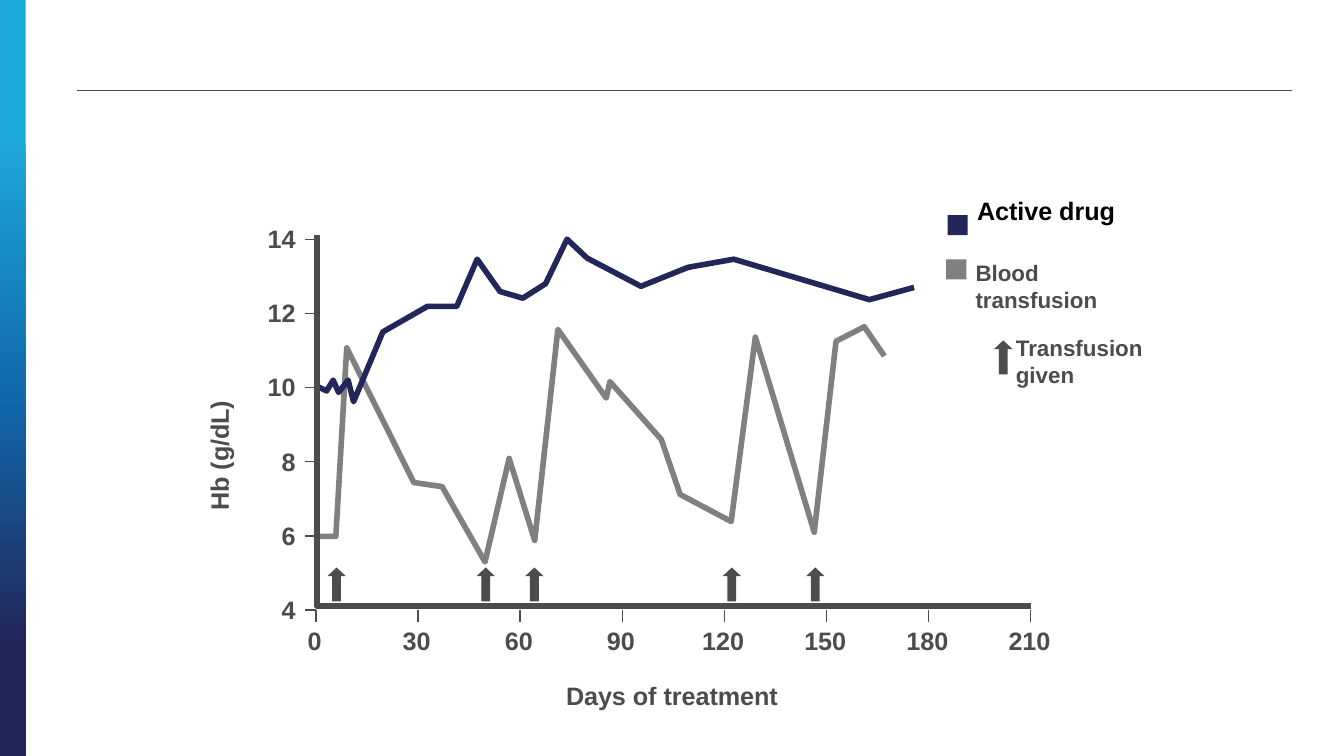
from copy import deepcopy
from typing import NamedTuple

from pptx import Presentation
from pptx.dml.color import RGBColor
from pptx.enum.shapes import MSO_CONNECTOR, MSO_SHAPE
from pptx.enum.text import MSO_ANCHOR, PP_ALIGN
from pptx.oxml.ns import qn
from pptx.util import Inches, Pt

LINE = MSO_CONNECTOR.STRAIGHT
RECT, UP_ARROW = MSO_SHAPE.RECTANGLE, MSO_SHAPE.UP_ARROW
TOP, MIDDLE, BOTTOM = MSO_ANCHOR.TOP, MSO_ANCHOR.MIDDLE, MSO_ANCHOR.BOTTOM
LEFT, CENTER, RIGHT = PP_ALIGN.LEFT, PP_ALIGN.CENTER, PP_ALIGN.RIGHT

COLORS = {
    "sky": "1EA9DB", "blue": "1067AB", "navy": "222658",
    "gray": "808080", "dark": "4C4C4C", "black": "000000",
}
WIDTH = Inches(10)
HEIGHT = WIDTH * 9 // 16
COLS, ROWS = 100, 56.25
COL, ROW = WIDTH / COLS, HEIGHT / ROWS
X0, Y0 = 23.5, 45.4
COLS_PER_DAY, ROWS_PER_HB = 7.6 / 30, 2.76
HB_MIN = 4
ARROW_W, ARROW_H = 1.1, 2.4
SWATCH = 1.5


class Box(NamedTuple):
    col: float
    row: float
    cols: float
    rows: float


class Label(NamedTuple):
    text: str
    box: Box
    size: float = 13.5
    color: str = "dark"
    align: PP_ALIGN = CENTER
    anchor: MSO_ANCHOR = TOP
    insets: tuple = (0, 0, 0, 0)
    wrap: bool = False
    rotation: float = 0


class Series(NamedTuple):
    color: str
    points: list


SERIES = [
    Series("gray", [
        (0, 5.99), (5.9, 5.99), (9.1, 11.07), (28.8, 7.44), (37.1, 7.33),
        (49.7, 5.3), (56.8, 8.09), (64.3, 5.88), (71.1, 11.57), (85.3, 9.72),
        (86.4, 10.16), (101.5, 8.6), (107, 7.12), (122, 6.39), (129.1, 11.36),
        (146.4, 6.1), (152.8, 11.25), (161.1, 11.64), (167, 10.85),
    ]),
    Series("navy", [
        (0, 10.05), (3.2, 9.91), (5.1, 10.2), (6.7, 9.87), (9.5, 10.2),
        (11.1, 9.62), (19.7, 11.5), (32.8, 12.19), (41.4, 12.19), (47.4, 13.46),
        (54.1, 12.59), (60.8, 12.41), (67.5, 12.8), (73.8, 14), (79.7, 13.49),
        (95.5, 12.73), (109.3, 13.24), (122.8, 13.46), (162.6, 12.37),
        (175.7, 12.7),
    ]),
]
TRANSFUSION_DAYS = [6.1, 49.9, 64.2, 122.2, 146.7]
LEGEND_INSETS = (1, 0.5, 1, 0.5)
LABELS = [
    Label("Hb (g/dL)", Box(10.5, 32, 13, 3.8), anchor=BOTTOM,
          insets=(0, 0, 0, 1.5), wrap=True, rotation=270),
    Label("Days of treatment", Box(42, 50.6, 16, 2.3)),
    Label("Active drug", Box(72.7, 14.5, 10.3, 4.5), color="black",
          align=LEFT, wrap=True),
    Label("Blood transfusion", Box(71.6, 18.8, 15.8, 5), 12, align=LEFT,
          insets=LEGEND_INSETS, wrap=True),
    Label("Transfusion given", Box(74.6, 24.4, 13.2, 5), 12, align=LEFT,
          insets=LEGEND_INSETS, wrap=True),
]


def rgb(name: str) -> RGBColor:
    return RGBColor.from_string(COLORS[name])


def x(col: float) -> int:
    return round(col * COL)


def y(row: float) -> int:
    return round(row * ROW)


def day_col(day: float) -> float:
    return X0 + day * COLS_PER_DAY


def hb_row(hb: float) -> float:
    return Y0 - (hb - HB_MIN) * ROWS_PER_HB


def add_box(shapes, kind: MSO_SHAPE, box: Box, color: str):
    sp = shapes.add_shape(kind, x(box.col), y(box.row), x(box.cols), y(box.rows))
    sp.shadow.inherit = False
    sp.fill.solid()
    sp.fill.fore_color.rgb = rgb(color)
    sp.line.fill.background()
    return sp


def add_sidebar(shapes) -> None:
    sp = add_box(shapes, RECT, Box(0, 0, 1.9, ROWS), "sky")
    sp.fill.gradient()
    sp.fill.gradient_angle = 270
    stops = sp._element.spPr.find(".//" + qn("a:gsLst"))
    stops.append(deepcopy(stops[0]))
    scale = [(0.18, "sky"), (0.53, "blue"), (0.85, "navy")]
    for stop, (position, color) in zip(sp.fill.gradient_stops, scale):
        stop.position = position
        stop.color.rgb = rgb(color)


def add_line(shapes, start: tuple, end: tuple, width: float) -> None:
    s = shapes.add_connector(LINE, x(start[0]), y(start[1]), x(end[0]), y(end[1]))
    s.line.color.rgb = rgb("dark")
    s.line.width = Pt(width)
    s._element.spPr.append(s._element.spPr.makeelement(qn("a:effectLst"), {}))


def add_polyline(shapes, points: list, color: str) -> None:
    places = [(x(col), y(row)) for col, row in points]
    builder = shapes.build_freeform(*places[0])
    builder.add_line_segments(places[1:], close=False)
    sp = builder.convert_to_shape()
    sp.shadow.inherit = False
    sp.fill.background()
    sp.line.color.rgb = rgb(color)
    sp.line.width = Pt(3)


def add_arrow(shapes, col: float, row: float) -> None:
    sp = add_box(shapes, UP_ARROW, Box(col, row, ARROW_W, ARROW_H), "dark")
    sp.adjustments[1] = 0.476
    sp.line.color.rgb = rgb("dark")
    sp.line.width = Pt(0.75)
    ln = sp._element.spPr.find(qn("a:ln"))
    ln.append(ln.makeelement(qn("a:miter"), {"lim": "800000"}))


def add_label(shapes, label: Label) -> None:
    box = label.box
    sp = shapes.add_textbox(x(box.col), y(box.row), x(box.cols), y(box.rows))
    sp.rotation = label.rotation
    tf = sp.text_frame
    left, top, right, bottom = label.insets
    tf.margin_left, tf.margin_right = x(left), x(right)
    tf.margin_top, tf.margin_bottom = y(top), y(bottom)
    tf.word_wrap = label.wrap
    tf.vertical_anchor = label.anchor
    p = tf.paragraphs[0]
    p.text = label.text
    p.alignment = label.align
    p.font.name = "Arial"
    p.font.size = Pt(label.size)
    p.font.bold = True
    p.font.color.rgb = rgb(label.color)


def add_axes(shapes) -> None:
    add_polyline(shapes, [(23.6, 17.5), (23.6, 45.1), (76.7, 45.1)], "dark")
    for day in range(0, 211, 30):
        col = day_col(day)
        add_line(shapes, (col, 46.3), (col, Y0), 0.75)
        add_label(shapes, Label(str(day), Box(col - 1.7, 45.6, 3.2, 3.2),
                                insets=(0, 0.9, 0, 0)))
    for hb in range(HB_MIN, 15, 2):
        row = hb_row(hb)
        add_line(shapes, (22.7, row), (X0, row), 0.75)
        add_label(shapes, Label(str(hb), Box(19.9, row - 1.2, 3.3, 2.3), align=RIGHT,
                                anchor=MIDDLE, insets=(0, 0, 1.2, 0)))


def main() -> None:
    prs = Presentation()
    prs.slide_width, prs.slide_height = WIDTH, HEIGHT
    shapes = prs.slides.add_slide(prs.slide_layouts[6]).shapes
    add_sidebar(shapes)
    add_line(shapes, (96.1, 6.7), (5.7, 6.7), 0.5)
    for series in SERIES:
        points = [(day_col(day), hb_row(hb)) for day, hb in series.points]
        add_polyline(shapes, points, series.color)
    add_axes(shapes)
    for day in TRANSFUSION_DAYS:
        add_arrow(shapes, day_col(day) - ARROW_W / 2, 42.3)
    add_arrow(shapes, 74.1, 25.4)
    add_box(shapes, RECT, Box(70.4, 19.3, SWATCH, SWATCH), "gray")
    add_box(shapes, RECT, Box(70.5, 16, SWATCH, SWATCH), "navy")
    for label in LABELS:
        add_label(shapes, label)
    prs.save("out.pptx")


if __name__ == "__main__":
    main()
